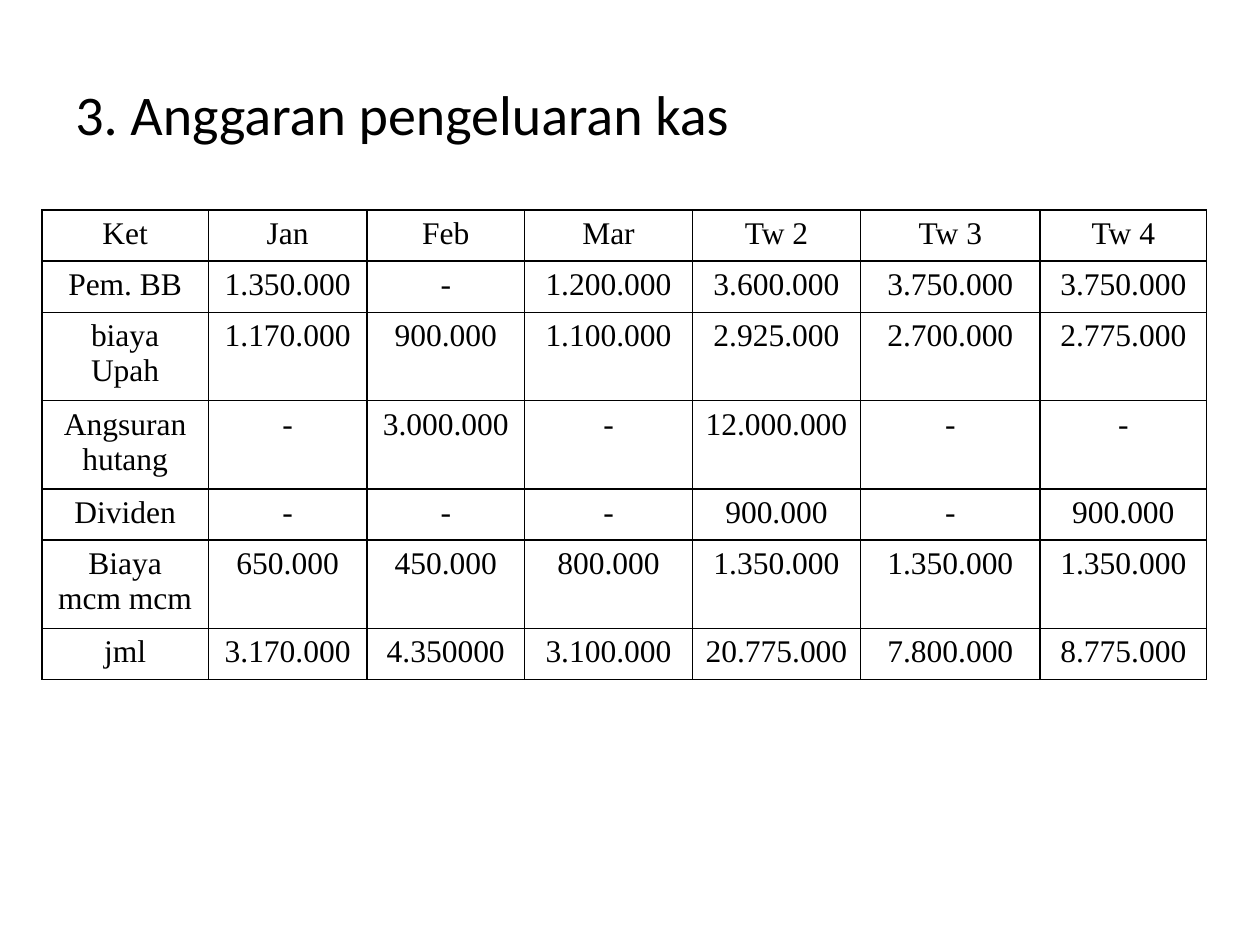
from dataclasses import dataclass

from lxml import etree
from pptx import Presentation
from pptx import util as u
from pptx.dml.color import RGBColor
from pptx.enum import text
from pptx.oxml import ns


@dataclass(frozen=True)
class Theme:
    ink: str = "000000"
    title_font: str = "Calibri"
    table_font: str = "Times New Roman"
    title_size: int = 32
    table_size: int = 18
    border: int = 1


THEME = Theme()

COLUMN_WIDTHS = [95, 90.75, 90, 96, 96, 102.75, 95]
LINE_ROW, TALL_ROW, WRAPPED_ROW = 29.3, 50.4, 47.2
ROWS = [
    (LINE_ROW, ["Ket", "Jan", "Feb", "Mar", "Tw 2", "Tw 3", "Tw 4"]),
    (LINE_ROW, ["Pem. BB", "1.350.000", "-", "1.200.000", "3.600.000", "3.750.000", "3.750.000"]),
    (TALL_ROW, ["biaya Upah", "1.170.000", "900.000", "1.100.000", "2.925.000", "2.700.000", "2.775.000"]),
    (TALL_ROW, ["Angsuran hutang", "-", "3.000.000", "-", "12.000.000", "-", "-"]),
    (LINE_ROW, ["Dividen", "-", "-", "-", "900.000", "-", "900.000"]),
    (WRAPPED_ROW, ["Biaya mcm mcm", "650.000", "450.000", "800.000", "1.350.000", "1.350.000", "1.350.000"]),
    (LINE_ROW, ["jml", "3.170.000", "4.350000", "3.100.000", "20.775.000", "7.800.000", "8.775.000"]),
]


def set_font(p, name, size):
    p.font.name = name
    p.font.size = u.Pt(size)
    p.font.color.rgb = RGBColor.from_string(THEME.ink)


def add_title(s, title):
    sp = s.shapes.add_textbox(u.Pt(36), u.Pt(42), u.Pt(648), u.Pt(440))
    tf = sp.text_frame
    tf.word_wrap = True
    p = tf.paragraphs[0]
    p.text = title
    set_font(p, THEME.title_font, THEME.title_size)


def set_borders(cell):
    tc_pr = cell._tc.get_or_add_tcPr()
    for side in ("a:lnL", "a:lnR", "a:lnT", "a:lnB"):
        ln = etree.SubElement(tc_pr, ns.qn(side), w=str(u.Pt(THEME.border)))
        fill = etree.SubElement(ln, ns.qn("a:solidFill"))
        etree.SubElement(fill, ns.qn("a:srgbClr"), val=THEME.ink)


def fill_cell(cell, value):
    set_borders(cell)
    cell.fill.background()
    p = cell.text_frame.paragraphs[0]
    p.text = value
    p.alignment = text.PP_ALIGN.CENTER
    set_font(p, THEME.table_font, THEME.table_size)


def add_budget_table(s):
    height = sum(row_height for row_height, _ in ROWS)
    frame = s.shapes.add_table(len(ROWS), len(COLUMN_WIDTHS), u.Pt(24), u.Pt(120),
                               u.Pt(sum(COLUMN_WIDTHS)), u.Pt(height))
    table = frame.table
    table.first_row = table.horz_banding = False
    for column, width in zip(table.columns, COLUMN_WIDTHS):
        column.width = u.Pt(width)
    for row, (row_height, values) in zip(table.rows, ROWS):
        row.height = u.Pt(row_height)
        for cell, value in zip(row.cells, values):
            fill_cell(cell, value)


def main():
    prs = Presentation()
    prs.slide_width, prs.slide_height = u.Pt(720), u.Pt(540)
    s = prs.slides.add_slide(prs.slide_layouts[6])
    add_title(s, "3. Anggaran pengeluaran kas")
    add_budget_table(s)
    prs.save("out.pptx")


if __name__ == "__main__":
    main()
